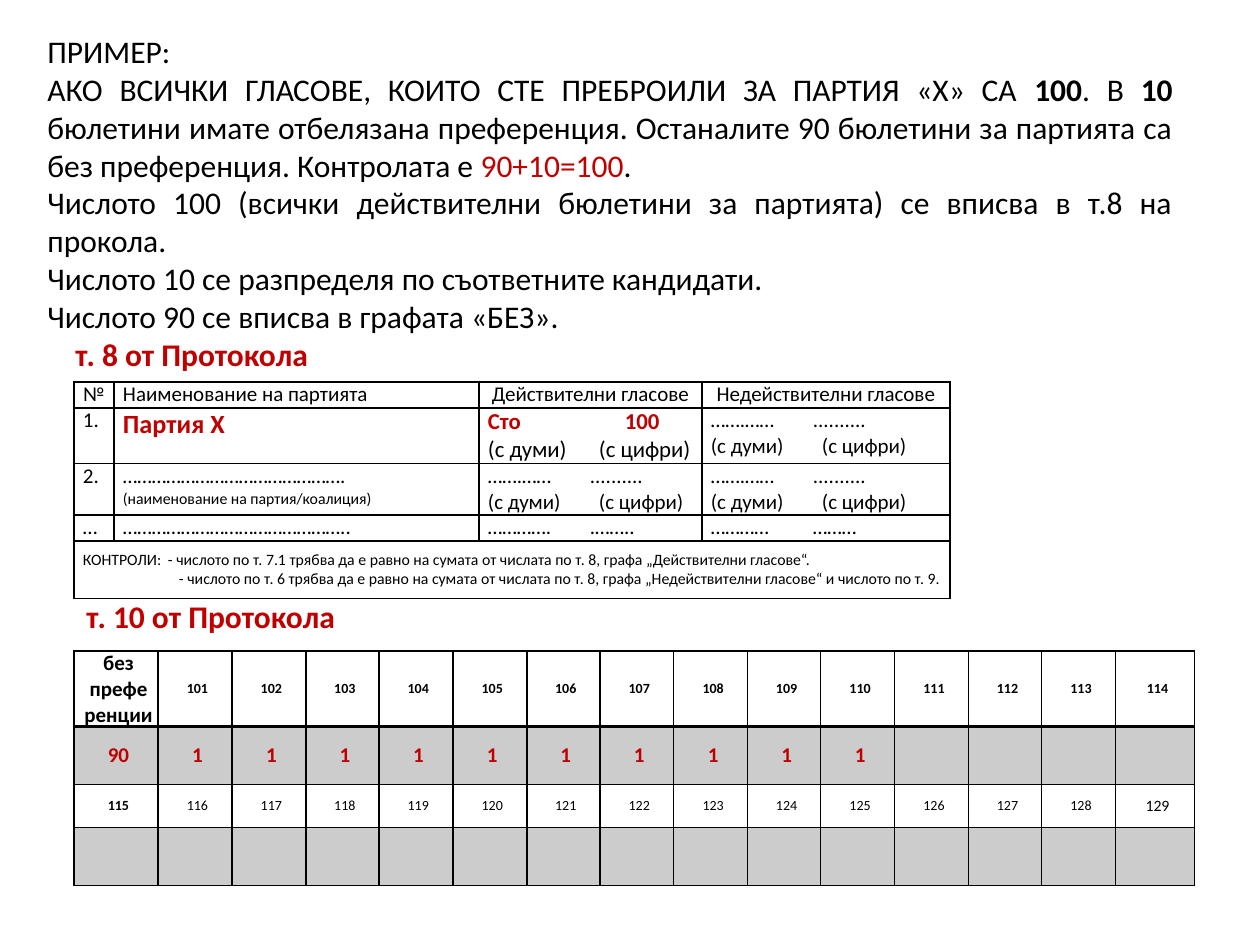
"""Build the slide that explains how preference votes are entered in the protocol."""
from dataclasses import dataclass

from lxml import etree
from pptx import Presentation
from pptx.dml.color import RGBColor
from pptx.enum.text import MSO_ANCHOR, PP_ALIGN
from pptx.oxml.ns import qn
from pptx.util import Emu, Pt

LEFT, CENTER, JUSTIFY = PP_ALIGN.LEFT, PP_ALIGN.CENTER, PP_ALIGN.JUSTIFY
TOP, MIDDLE = MSO_ANCHOR.TOP, MSO_ANCHOR.MIDDLE
EMU_PER_PX = 914400 / 126


@dataclass(frozen=True)
class Theme:
    font: str = "Calibri"
    black: str = "000000"
    red: str = "C00000"
    shade_percent: int = 20
    body: int = 18
    party: int = 15
    votes: int = 13
    cell: int = 12
    note: int = 9
    number: int = 8


@dataclass(frozen=True)
class Line:
    runs: tuple
    size: int
    color: str = Theme.black
    bold: bool = False
    align: PP_ALIGN = LEFT
    margin: int = 0
    indent: int = 0
    tab: int = 0


def px(value):
    return Emu(round(value * EMU_PER_PX))


class SlideBuilder:
    def __init__(self, slide, theme):
        self.slide = slide
        self.theme = theme

    def fill_text(self, text_frame, lines):
        for index, line in enumerate(lines):
            paragraph = text_frame.paragraphs[0] if index == 0 else text_frame.add_paragraph()
            paragraph.alignment = line.align
            properties = paragraph._p.get_or_add_pPr()
            if line.margin:
                properties.set("marL", str(px(line.margin)))
                properties.set("indent", str(px(line.indent)))
            if line.tab:
                tabs = etree.SubElement(properties, qn("a:tabLst"))
                etree.SubElement(tabs, qn("a:tab"), pos=str(px(line.tab)), algn="l")
            for text, color, bold in line.runs:
                run = paragraph.add_run()
                run.text = text
                run.font.name = self.theme.font
                run.font.size = Pt(line.size)
                run.font.bold = bold or line.bold
                run.font.color.rgb = RGBColor.from_string(color or line.color)

    def text(self, left, top, width, height, lines):
        box = self.slide.shapes.add_textbox(px(left), px(top), px(width), px(height))
        box.text_frame.word_wrap = True
        self.fill_text(box.text_frame, lines)

    def border(self, cell, bottom_width):
        properties = cell._tc.get_or_add_tcPr()
        for side, width in (("L", 1), ("R", 1), ("T", 1), ("B", bottom_width)):
            edge = etree.SubElement(properties, qn(f"a:ln{side}"), w=str(Pt(width)))
            fill = etree.SubElement(edge, qn("a:solidFill"))
            etree.SubElement(fill, qn("a:srgbClr"), val=self.theme.black)

    def shade(self, cell):
        cell.fill.solid()
        cell.fill.fore_color.rgb = RGBColor.from_string(self.theme.black)
        color = cell._tc.tcPr.find(qn("a:solidFill")).find(qn("a:srgbClr"))
        etree.SubElement(color, qn("a:alpha"), val=str(self.theme.shade_percent * 1000))

    def table(self, left, top, columns, heights, rows, margins, anchor, shaded=(), thick=()):
        frame = self.slide.shapes.add_table(
            len(heights), len(columns), px(left), px(top), px(sum(columns)), px(sum(heights)))
        table = frame.table
        table.first_row = table.horz_banding = False
        for column, width in zip(table.columns, columns):
            column.width = px(width)
        for index, (row, height, contents) in enumerate(zip(table.rows, heights, rows)):
            row.height = px(height)
            for cell, lines in zip(row.cells, contents):
                cell.margin_left, cell.margin_right = map(px, margins)
                cell.margin_top = cell.margin_bottom = 0
                cell.vertical_anchor = anchor
                self.border(cell, 2 if index in thick else 1)
                if index in shaded:
                    self.shade(cell)
                else:
                    cell.fill.background()
                self.fill_text(cell.text_frame, lines)
        return table


def plain(text, size, **style):
    return Line(((text, None, False),), size, **style)


def protocol_rows(theme):
    def cell(text, **style):
        return [plain(text, theme.cell, **style)]

    def words(size):
        return plain("(с думи)\t(с цифри)", size, tab=111)

    blank = cell("…….……\t..........", tab=102) + [words(theme.cell)]
    party = [plain("Партия Х", theme.party, color=theme.red, bold=True)]
    votes = [plain("Сто\t100", theme.votes, color=theme.red, bold=True, tab=137),
             words(theme.votes)]
    name = cell("……………………………………….") + [
        plain("(наименование на партия/коалиция)", theme.note)]
    checks = [
        plain("КОНТРОЛИ:\t- числото по т. 7.1 трябва да е равно на сумата от числата "
              "по т. 8, графа „Действителни гласове“.", theme.note, tab=85),
        plain("- числото по т. 6 трябва да е равно на сумата от числата по т. 8, "
              "графа „Недействителни гласове“ и числото по т. 9.", theme.note,
              margin=122, indent=-26)]
    return [
        [cell("№", align=CENTER), cell("Наименование на партията"),
         cell("Действителни гласове", align=CENTER),
         cell("Недействителни гласове", align=CENTER)],
        [cell("1."), party, votes, blank],
        [cell("2."), name, blank, blank],
        [cell("…"), cell("……………………………………….."),
         cell("………….\t.……..", tab=102), cell("…………\t………", tab=102)],
        [checks, [], [], []],
    ]


def preference_rows(theme):
    def cell(text, size=theme.number, **style):
        return [plain(text, size, align=CENTER, **style)]

    def red(text):
        return cell(text, theme.cell, color=theme.red, bold=True)

    without = cell("без префе", theme.cell, bold=True) + cell("ренции", theme.cell, bold=True)
    return [
        [without] + [cell(str(number), bold=True) for number in range(101, 115)],
        [red("90")] + [red("1")] * 10 + [[]] * 4,
        [cell("115", bold=True)] + [cell(str(number)) for number in range(116, 129)]
        + [cell("129", theme.note)],
        [[]] * 15,
    ]


def example_lines(theme):
    def body(*runs):
        return Line(runs, theme.body, align=JUSTIFY)

    return [
        body(("ПРИМЕР:", None, False)),
        body(("АКО ВСИЧКИ ГЛАСОВЕ, КОИТО СТЕ ПРЕБРОИЛИ ЗА ПАРТИЯ «Х» СА ", None, False),
             ("100", None, True), (". В ", None, False), ("10 ", None, True),
             ("бюлетини имате отбелязана преференция. Останалите 90 бюлетини за партията "
              "са без преференция. Контролата е ", None, False),
             ("90+10=100", theme.red, False), (". ", None, False)),
        body(("Числото 100 (всички действителни бюлетини за партията) се вписва "
              "в т.8 на прокола.", None, False)),
        body(("Числото 10 се разпределя по съответните кандидати.", None, False)),
        body(("Числото 90 се вписва в графата «БЕЗ».", None, False)),
        plain("т. 8 от Протокола", theme.body, color=theme.red, bold=True,
              align=JUSTIFY, margin=28),
    ]


def main():
    theme = Theme()
    presentation = Presentation()
    presentation.slide_width, presentation.slide_height = px(1260), px(945)
    slide = presentation.slides.add_slide(presentation.slide_layouts[6])
    builder = SlideBuilder(slide, theme)
    protocol = builder.table(74, 382, [40, 365, 223, 248], [26, 55, 51, 26, 58],
                             protocol_rows(theme), (9, 9), TOP)
    protocol.cell(4, 0).merge(protocol.cell(4, 3))
    protocol.cell(4, 0).vertical_anchor = MIDDLE
    builder.text(35, 26, 1150, 357, example_lines(theme))
    builder.table(74, 651, [84, *[74, 74, 73] * 4, 74, 79], [75, 58, 43, 58],
                  preference_rows(theme), (5, 0), MIDDLE, shaded=(1, 3), thick=(0,))
    builder.text(74, 591, 1150, 50, [
        plain("т. 10 от Протокола", theme.body, color=theme.red, bold=True, align=JUSTIFY)])
    presentation.save("out.pptx")


if __name__ == "__main__":
    main()
